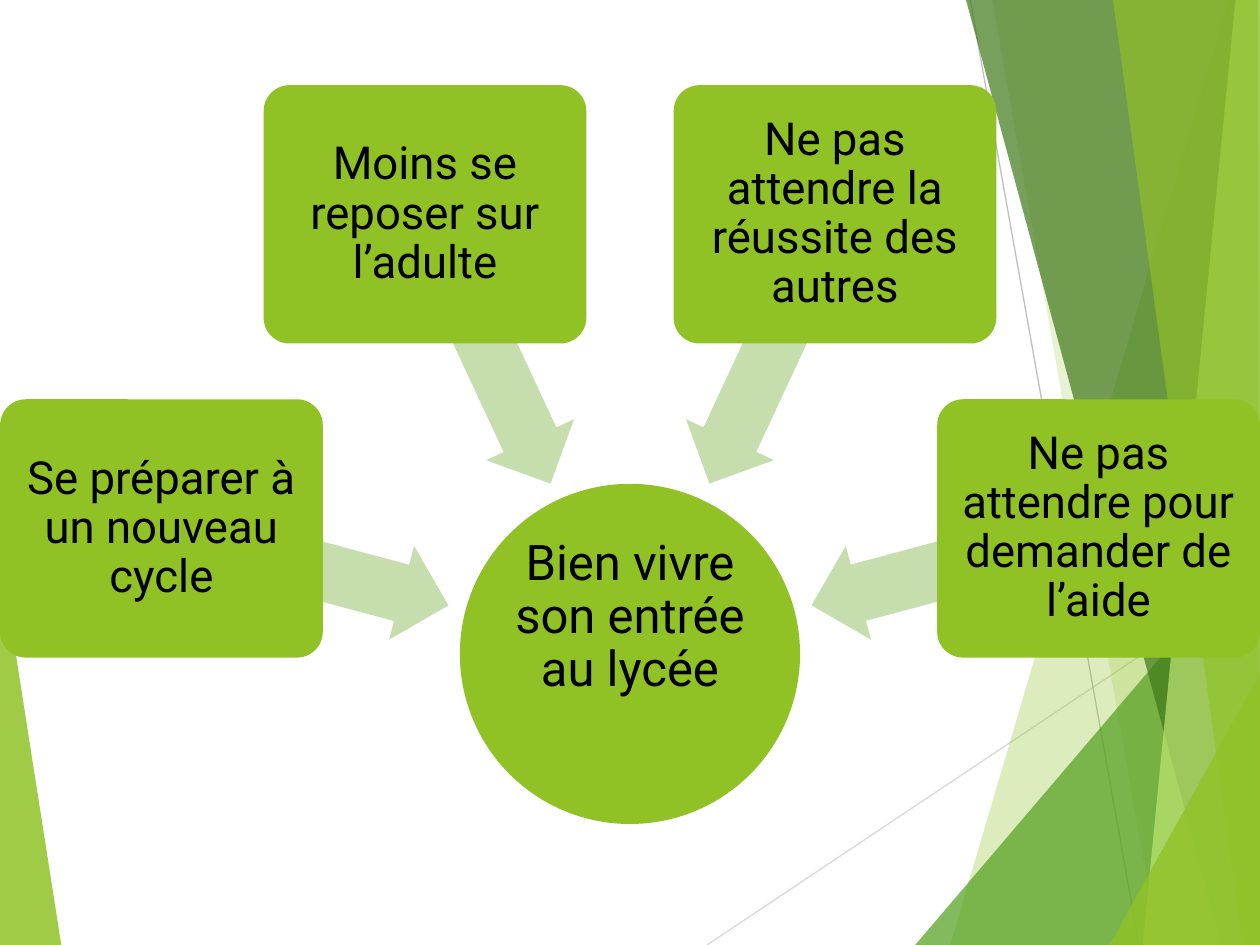
from math import cos, radians, sin

from lxml.etree import SubElement
from pptx import Presentation
from pptx.dml.color import RGBColor
from pptx.enum.shapes import MSO_CONNECTOR, MSO_SHAPE
from pptx.enum.text import MSO_ANCHOR, PP_ALIGN
from pptx.oxml.ns import qn
from pptx.util import Pt

WIDTH, HEIGHT = 720, 540
LIME = RGBColor(0x90, 0xC2, 0x26)
GREEN = RGBColor(0x54, 0xA0, 0x21)
DARK_GREEN = RGBColor(0x3F, 0x78, 0x19)
LIGHT_LIME = RGBColor(0xC0, 0xE4, 0x74)
PALE_GREEN = RGBColor(0xC6, 0xDD, 0xAD)
GRAY = RGBColor(0xBF, 0xBF, 0xBF)
LIGHT_GRAY = RGBColor(0xD9, 0xD9, 0xD9)
BLACK = RGBColor(0, 0, 0)

CENTER_X, CENTER_Y = 360, 373.7
ARROW_RADIUS, BOX_RADIUS = 192.4, 277.2
FIRST_ANGLE, ANGLE_STEP = 15, 50

LINES = [
    ((404, 540), (720, 329), LIGHT_GRAY),
    ((554.4, 0), (650.9, 540), GRAY),
]
LEFT_FACET = ([(0, 316), (35, 540), (0, 540)], LIME, 85)
RIGHT_FACETS = [
    ([(702, 0), (543, 540), (720, 540), (720, 0)], LIME, 30),
    ([(567, 0), (662, 540), (720, 540), (720, 0)], LIME, 20),
    ([(523, 540), (720, 309), (720, 540)], GREEN, 72),
    ([(552, 0), (698, 540), (720, 540), (720, 0)], DARK_GREEN, 70),
    ([(706, 0), (653, 540), (720, 540), (720, 0)], LIGHT_LIME, 70),
    ([(636, 0), (710, 540), (720, 540), (719, 0)], LIME, 65),
    ([(634, 540), (720, 385), (720, 540)], LIME, 80),
]
GOAL = "Bien vivre son entrée au lycée"
ADVICE = [
    "Se préparer à un nouveau cycle",
    "Moins se reposer sur l’adulte",
    "Ne pas attendre la réussite des autres",
    "Ne pas attendre pour demander de l’aide",
]


def write_text(shape, text, size, inset, bottom=None, font="Roboto", color=BLACK):
    frame = shape.text_frame
    frame.word_wrap = True
    frame.vertical_anchor = MSO_ANCHOR.MIDDLE
    frame.margin_left = frame.margin_right = frame.margin_top = Pt(inset)
    frame.margin_bottom = Pt(inset if bottom is None else bottom)
    paragraph = frame.paragraphs[0]
    paragraph.alignment = PP_ALIGN.CENTER
    paragraph.line_spacing = 0.9
    run = paragraph.add_run()
    run.text = text
    run.font.name = font
    run.font.size = Pt(size)
    run.font.color.rgb = color


class SlideBuilder:
    def __init__(self, slide):
        self.slide = slide
        self.shapes = slide.shapes

    def style(self, shape, color):
        shape.shadow.inherit = False
        shape.fill.solid()
        shape.fill.fore_color.rgb = color
        shape.line.fill.background()

    def facet(self, points, color, opacity):
        builder = self.shapes.build_freeform(*points[0], scale=Pt(1))
        builder.add_line_segments(points[1:], close=True)
        shape = builder.convert_to_shape()
        self.style(shape, color)
        color_element = shape._element.spPr.find(qn("a:solidFill"))[0]
        SubElement(color_element, qn("a:alpha"), val=str(opacity * 1000))

    def line(self, start, end, color):
        connector = self.shapes.add_connector(
            MSO_CONNECTOR.STRAIGHT, *[Pt(value) for value in (*start, *end)]
        )
        connector.line.color.rgb = color
        connector.line.width = Pt(0.75)
        SubElement(connector._element.spPr, qn("a:effectLst"))

    def centered_shape(self, kind, x, y, width, height, color):
        shape = self.shapes.add_shape(
            kind, Pt(x - width / 2), Pt(y - height / 2), Pt(width), Pt(height)
        )
        self.style(shape, color)
        return shape

    def goal(self, text):
        circle = self.centered_shape(
            MSO_SHAPE.OVAL, CENTER_X, CENTER_Y, 194.4, 194.4, LIME
        )
        write_text(circle, text, size=28, inset=1.4, bottom=43)

    def arrow(self, x, y, rotation):
        arrow = self.centered_shape(MSO_SHAPE.LEFT_ARROW, x, y, 170, 55.4, PALE_GREEN)
        arrow.adjustments[0] = 0.6
        arrow.adjustments[1] = 0.5
        arrow.rotation = rotation

    def box(self, x, y, text):
        box = self.centered_shape(
            MSO_SHAPE.ROUNDED_RECTANGLE, x, y, 184.4, 147.6, LIME
        )
        box.adjustments[0] = 0.1
        write_text(box, text, size=26, inset=3.6)


def around_center(radius, angle):
    turn = radians(angle)
    return CENTER_X - radius * cos(turn), CENTER_Y - radius * sin(turn)


def main():
    presentation = Presentation()
    presentation.slide_width = Pt(WIDTH)
    presentation.slide_height = Pt(HEIGHT)
    builder = SlideBuilder(presentation.slides.add_slide(presentation.slide_layouts[6]))

    builder.facet(*LEFT_FACET)
    for line in LINES:
        builder.line(*line)
    for facet in RIGHT_FACETS:
        builder.facet(*facet)

    builder.goal(GOAL)
    for index, text in enumerate(ADVICE):
        angle = FIRST_ANGLE + index * ANGLE_STEP
        builder.arrow(*around_center(ARROW_RADIUS, angle), rotation=180 + angle)
        builder.box(*around_center(BOX_RADIUS, angle), text)

    presentation.save("out.pptx")


if __name__ == "__main__":
    main()
